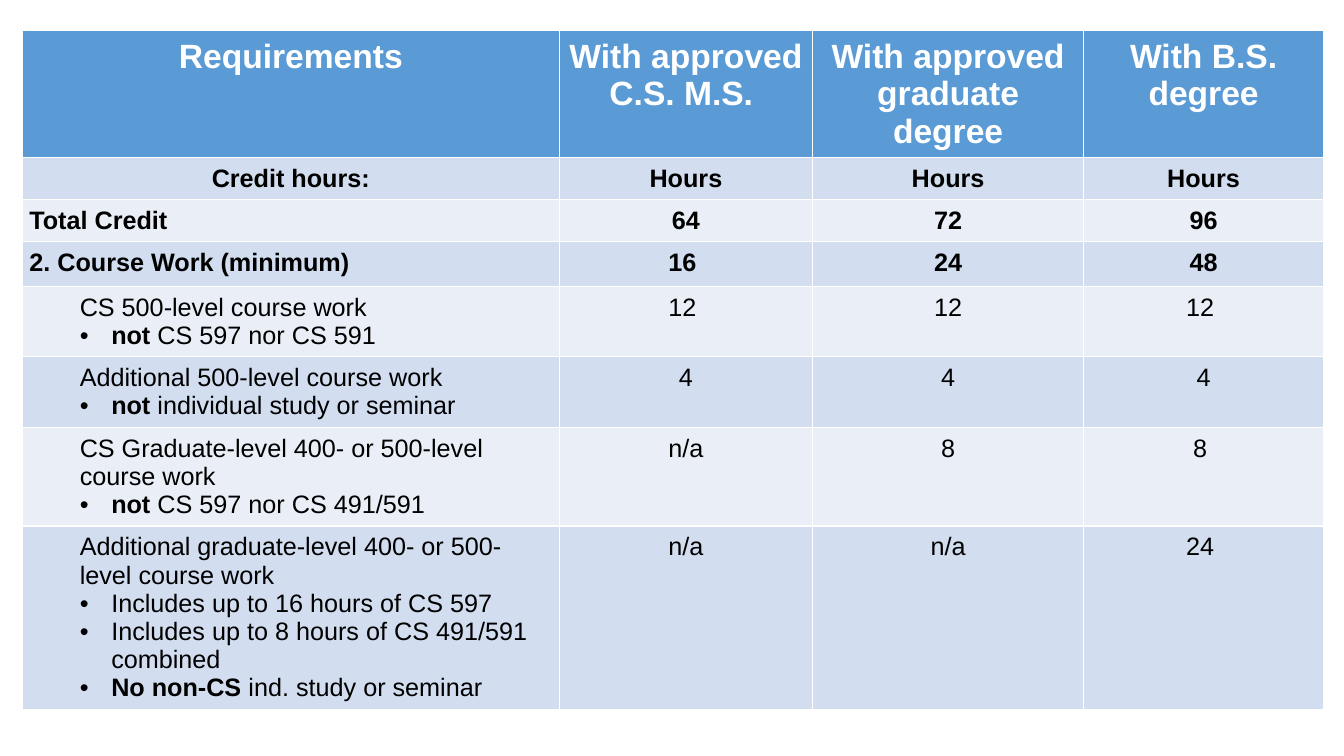
"""Build a slide with a table of degree requirements by entry level."""
from lxml.etree import SubElement
from pptx import Presentation
from pptx.dml.color import RGBColor as Rgb
from pptx.enum.text import PP_ALIGN as Align
from pptx.oxml.ns import qn
from pptx.util import Pt


def paint(fill, tone):
    fill.solid()
    fill.fore_color.rgb = Rgb.from_string(tone)


def bullet(para, left, hang):
    props = para._p.get_or_add_pPr()
    props.set("marL", str(Pt(left)))
    props.set("indent", str(Pt(-hang)))
    if hang:
        para.level = 1
        SubElement(props, qn("a:buFont")).set("typeface", "Arial")
        SubElement(props, qn("a:buChar")).set("char", "•")


widths = [383.5, 181, 193.5, 171.5]
heights = [89, 30, 30, 32, 50, 50, 70, 130]
rows = [
    (["Requirements"], "With approved C.S. M.S. ", "With approved graduate degree", "With B.S. degree"),
    (["Credit hours:"], "Hours", "Hours", "Hours"),
    (["Total Credit"], "64", "72", "96"),
    (["2. Course Work (minimum)"], "16 ", "24", "48"),
    (["CS 500-level course work", "not |CS 597 nor CS 591"], "12 ", "12", "12 "),
    (["Additional 500-level course work", "not |individual study or seminar"], "4", "4", "4"),
    (["CS Graduate-level 400- or 500-level course work", "not |CS 597 nor CS 491/591"],
     "n/a", "8", "8 "),
    (["Additional graduate-level 400- or 500-level course work",
      "Includes up to 16 hours of CS 597",
      "Includes up to 8 hours of CS 491/591 combined",
      "No non-CS |ind. study or seminar"], "n/a", "n/a", "24 "),
]

deck = Presentation()
deck.slide_width, deck.slide_height = Pt(960), Pt(540)
slide = deck.slides.add_slide(deck.slide_layouts[6])
frame = slide.shapes.add_table(len(rows), len(widths), Pt(16), Pt(22),
                               Pt(sum(widths)), Pt(sum(heights)))
table = frame.table
for col, width in zip(table.columns, widths):
    col.width = Pt(width)
for row, height in zip(table.rows, heights):
    row.height = Pt(height)

for r, (label, *hours) in enumerate(rows):
    tone = "5B9BD5" if r == 0 else "D2DEEF" if r % 2 else "EAEFF7"
    for c, lines in enumerate([label] + [[text] for text in hours]):
        cell = table.cell(r, c)
        paint(cell.fill, tone)
        cell.margin_left = cell.margin_right = Pt(5)
        cell.margin_top = cell.margin_bottom = Pt(5)
        body = cell.text_frame
        for n, line in enumerate(lines):
            para = body.add_paragraph() if n else body.paragraphs[0]
            para.alignment = Align.CENTER if c or r < 2 else Align.LEFT
            if c == 0 and r > 3:
                bullet(para, 58.5 if n else 36, 22.5 if n else 0)
            strong, bar, plain = line.partition("|")
            for text, bold in [(strong, r < 4 or bar == "|"), (plain, False)]:
                if text:
                    run = para.add_run()
                    run.text = text
                    run.font.name = "Arial"
                    run.font.size = Pt(18 if r else 24)
                    run.font.bold = bold
                    paint(run.font.fill, "000000" if r else "FFFFFF")

deck.save("out.pptx")
